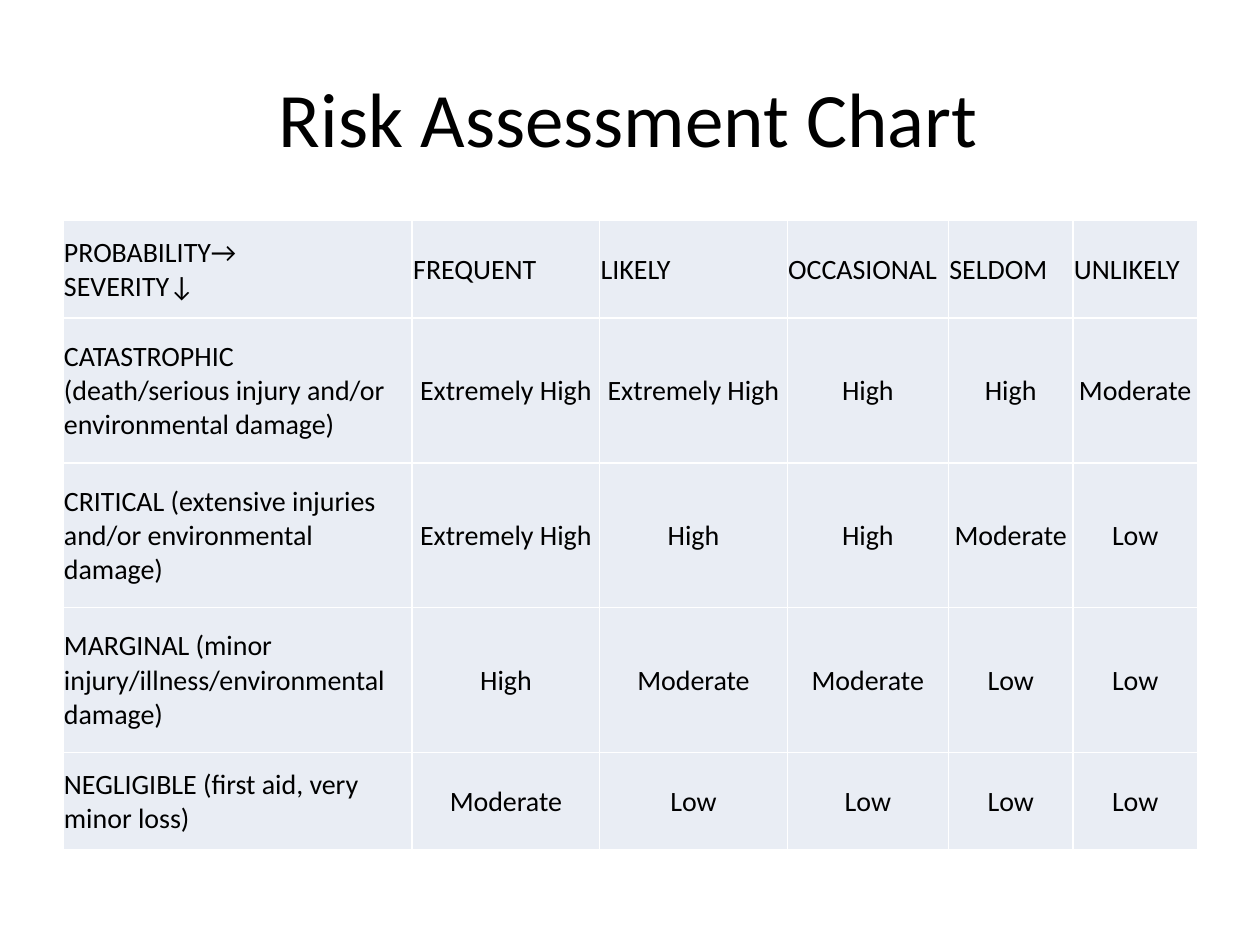
from dataclasses import dataclass

from lxml import etree
from pptx import Presentation, util as u
from pptx.dml.color import RGBColor
from pptx.enum import text
from pptx.oxml import ns

COLORS = {"ink": "000000", "cell": "E9EDF4", "border": "FFFFFF"}
COLUMN_WIDTHS = [7.04, 3.78, 3.78, 3.25, 2.51, 2.51]
ROW_HEIGHTS = [1.96, 2.92, 2.92, 2.92, 1.96]
RISKS = [
    ["PROBABILITY→\vSEVERITY↓", "FREQUENT", "LIKELY", "OCCASIONAL", "SELDOM", "UNLIKELY"],
    ["CATASTROPHIC\v(death/serious injury and/or environmental damage)",
     "Extremely High", "Extremely High", "High", "High", "Moderate"],
    ["CRITICAL (extensive injuries and/or environmental damage)",
     "Extremely High", "High", "High", "Moderate", "Low"],
    ["MARGINAL (minor injury/illness/environmental damage)",
     "High", "Moderate", "Moderate", "Low", "Low"],
    ["NEGLIGIBLE (first aid, very minor loss)",
     "Moderate", "Low", "Low", "Low", "Low"],
]


def write(frame, words, *, font, size, color, align):
    paragraph = frame.paragraphs[0]
    paragraph.text = words
    paragraph.alignment = align
    for run in paragraph.runs:
        run.font.name = font
        run.font.size = u.Pt(size)
        run.font.color.rgb = RGBColor.from_string(color)


@dataclass
class SlideWriter:
    """Holds the slide and the style of its elements."""

    slide: object
    font: str = "Calibri"
    title_size: int = 44
    table_size: int = 16
    border_width: int = 1

    def title(self, words, left, top, width, height):
        heading = self.slide.shapes.add_textbox(
            u.Cm(left), u.Cm(top), u.Cm(width), u.Cm(height)).text_frame
        heading.word_wrap = True
        heading.vertical_anchor = text.MSO_ANCHOR.MIDDLE
        write(heading, words, font=self.font, size=self.title_size,
              color=COLORS["ink"], align=text.PP_ALIGN.CENTER)

    def table(self, rows, left, top, widths, heights):
        grid = self.slide.shapes.add_table(
            len(rows), len(widths), u.Cm(left), u.Cm(top),
            u.Cm(sum(widths)), u.Cm(sum(heights))).table
        for column, width in zip(grid.columns, widths):
            column.width = u.Cm(width)
        for row, height in zip(grid.rows, heights):
            row.height = u.Cm(height)
        for r, row in enumerate(rows):
            for c, words in enumerate(row):
                is_label = r == 0 or c == 0
                align = text.PP_ALIGN.LEFT if is_label else text.PP_ALIGN.CENTER
                self.cell(grid.cell(r, c), words, align)

    def cell(self, cell, words, align):
        cell.margin_left = cell.margin_right = cell.margin_top = u.Cm(0.02)
        cell.margin_bottom = 0
        cell.vertical_anchor = text.MSO_ANCHOR.MIDDLE
        self.borders(cell)
        cell.fill.solid()
        cell.fill.fore_color.rgb = RGBColor.from_string(COLORS["cell"])
        write(cell.text_frame, words, font=self.font, size=self.table_size,
              color=COLORS["ink"], align=align)

    def borders(self, cell):
        properties = cell._tc.get_or_add_tcPr()
        for side in ("lnL", "lnR", "lnT", "lnB"):
            line = etree.SubElement(properties, ns.qn(f"a:{side}"),
                                    w=str(u.Pt(self.border_width)))
            fill = etree.SubElement(line, ns.qn("a:solidFill"))
            etree.SubElement(fill, ns.qn("a:srgbClr"), val=COLORS["border"])


def main():
    deck = Presentation()
    deck.slide_width, deck.slide_height = u.Cm(25.4), u.Cm(19.05)
    writer = SlideWriter(deck.slides.add_slide(deck.slide_layouts[6]))
    writer.title("Risk Assessment Chart", 3.15, 0.76, 19.05, 3.18)
    writer.table(RISKS, 1.27, 4.45, COLUMN_WIDTHS, ROW_HEIGHTS)
    deck.save("out.pptx")


if __name__ == "__main__":
    main()
